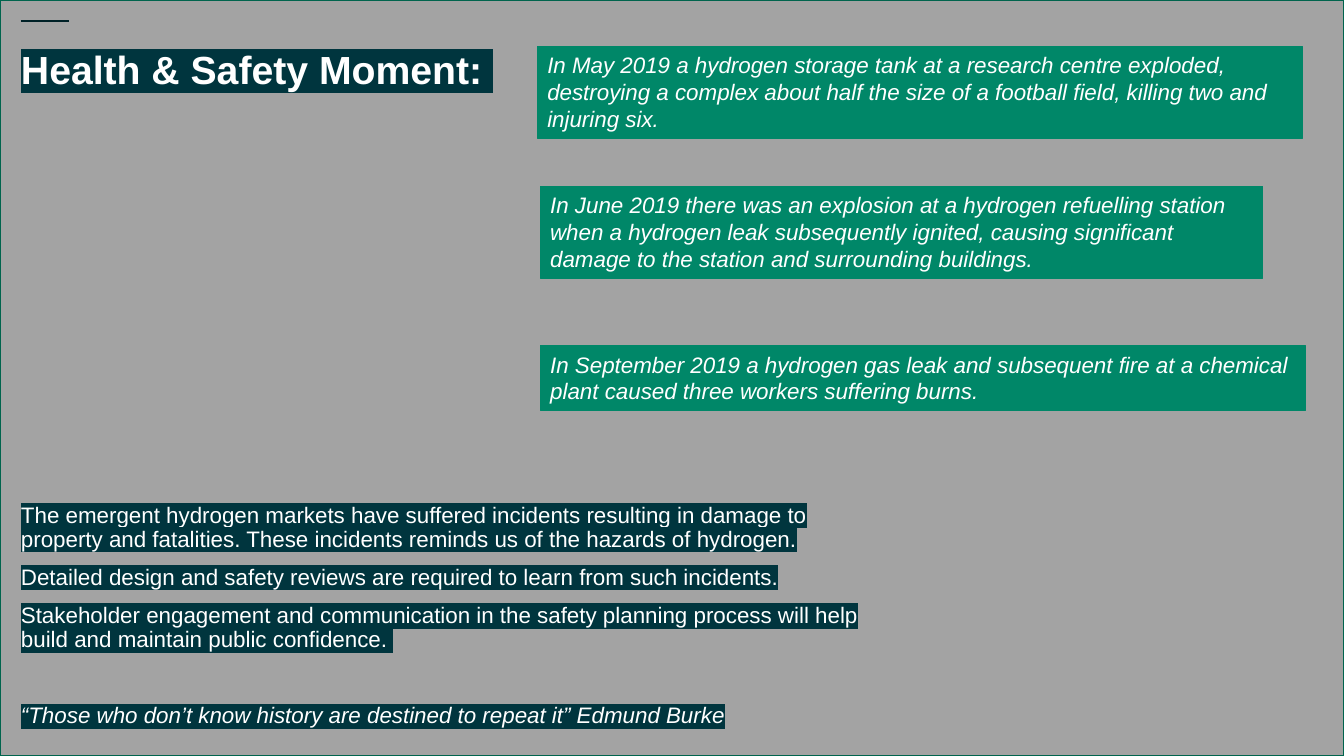
from lxml import etree
from pptx import Presentation
from pptx.dml.color import RGBColor
from pptx.enum import shapes, text
from pptx.oxml import ns
from pptx.util import Pt

COLOURS = {"ink": "00353E", "edge": "00644D", "green": "008768",
           "black": "000000", "white": "FFFFFF"}
FONT = "Arial"
WIDTH, HEIGHT = 960, 540
MARGIN = 15

TITLE = "Health & Safety Moment: "
# Left, top, width, height, wording
INCIDENTS = [
    (383.8, 33.1, 546.5, 65.5,
     "In May 2019 a hydrogen storage tank at a research centre exploded, destroying a "
     "complex about half the size of a football field, killing two and injuring six."),
    (385.9, 133.2, 516.2, 65.5,
     "In June 2019 there was an explosion at a hydrogen refuelling station when a hydrogen "
     "leak subsequently ignited, causing significant damage to the station and "
     "surrounding buildings."),
    (385.9, 247, 546.5, 46.1,
     "In September 2019 a hydrogen gas leak and subsequent fire at a chemical plant "
     "caused three workers suffering burns."),
]
# Wording, italic, space before
LESSONS = [
    ("The emergent hydrogen markets have suffered incidents resulting in damage to "
     "property and fatalities. These incidents reminds us of the hazards of hydrogen.",
     False, 10),
    ("Detailed design and safety reviews are required to learn from such incidents.",
     False, 10),
    ("Stakeholder engagement and communication in the safety planning process will help "
     "build and maintain public confidence. ", False, 10),
    ("“Those who don’t know history are destined to repeat it” Edmund Burke", True, 37),
]


def colour(name):
    return RGBColor.from_string(COLOURS[name])


def add_span(para, wording, size, bold=False, italic=False, highlight=None):
    span = para.add_run()
    span.text = wording
    font = span.font
    font.name, font.size, font.bold, font.italic = FONT, Pt(size), bold, italic
    font.color.rgb = colour("white")
    if highlight:
        mark = etree.Element(ns.qn("a:highlight"))
        etree.SubElement(mark, ns.qn("a:srgbClr"), val=COLOURS[highlight])
        font.fill._xPr.find(ns.qn("a:solidFill")).addnext(mark)


def add_panel(page, place, fill, line, line_width):
    panel = page.shapes.add_shape(shapes.MSO_SHAPE.RECTANGLE, *map(Pt, place))
    panel.shadow.inherit = False
    panel.fill.solid()
    panel.fill.fore_color.rgb = colour(fill)
    panel.line.color.rgb = colour(line)
    panel.line.width = Pt(line_width)
    return panel


def set_frame(frame):
    frame.word_wrap = True
    frame.auto_size = text.MSO_AUTO_SIZE.NONE
    frame.vertical_anchor = text.MSO_ANCHOR.TOP
    frame.margin_left = frame.margin_right = frame.margin_top = frame.margin_bottom = 0


deck = Presentation()
deck.slide_width, deck.slide_height = Pt(WIDTH), Pt(HEIGHT)
page = deck.slides.add_slide(deck.slide_layouts[5])

# Short rule at the top
rule = page.shapes.add_connector(shapes.MSO_CONNECTOR.STRAIGHT,
                                 Pt(MARGIN), Pt(15), Pt(49), Pt(15))
rule.line.color.rgb = colour("ink")
rule.line.width = Pt(1)
etree.SubElement(rule._element.spPr, ns.qn("a:effectLst"))

# Translucent shade over the page
shade = add_panel(page, (0, 0, WIDTH, HEIGHT), "black", "edge", 1)
tint = shade._element.spPr.find(ns.qn("a:solidFill"))[0]
etree.SubElement(tint, ns.qn("a:alpha"), val="36000")

# Title, raised above the shade
title = page.shapes.title
title.left, title.top, title.width, title.height = map(Pt, (MARGIN, 28.8, 929.5, 62.6))
shade._element.addnext(title._element)
set_frame(title.text_frame)
para = title.text_frame.paragraphs[0]
para.alignment = text.PP_ALIGN.LEFT
para.line_spacing = 1.1
add_span(para, TITLE, 28, bold=True, highlight="ink")

# Incident panels
for *place, wording in INCIDENTS:
    panel = add_panel(page, place, "green", "green", 0.75)
    frame = panel.text_frame
    frame.word_wrap = True
    frame.auto_size = text.MSO_AUTO_SIZE.SHAPE_TO_FIT_TEXT
    frame.vertical_anchor = text.MSO_ANCHOR.TOP
    para = frame.paragraphs[0]
    para.alignment = text.PP_ALIGN.LEFT
    para.space_after = Pt(6)
    add_span(para, wording, 16, italic=True)

# Lessons and closing quotation
box = page.shapes.add_textbox(*map(Pt, (MARGIN, 360, 619.2, 146.2)))
set_frame(box.text_frame)
for number, (wording, italic, gap) in enumerate(LESSONS):
    para = box.text_frame.add_paragraph() if number else box.text_frame.paragraphs[0]
    para.line_spacing = 0.9
    para.space_before = Pt(gap)
    add_span(para, wording, 16, italic=italic, highlight="ink")

deck.save("out.pptx")
